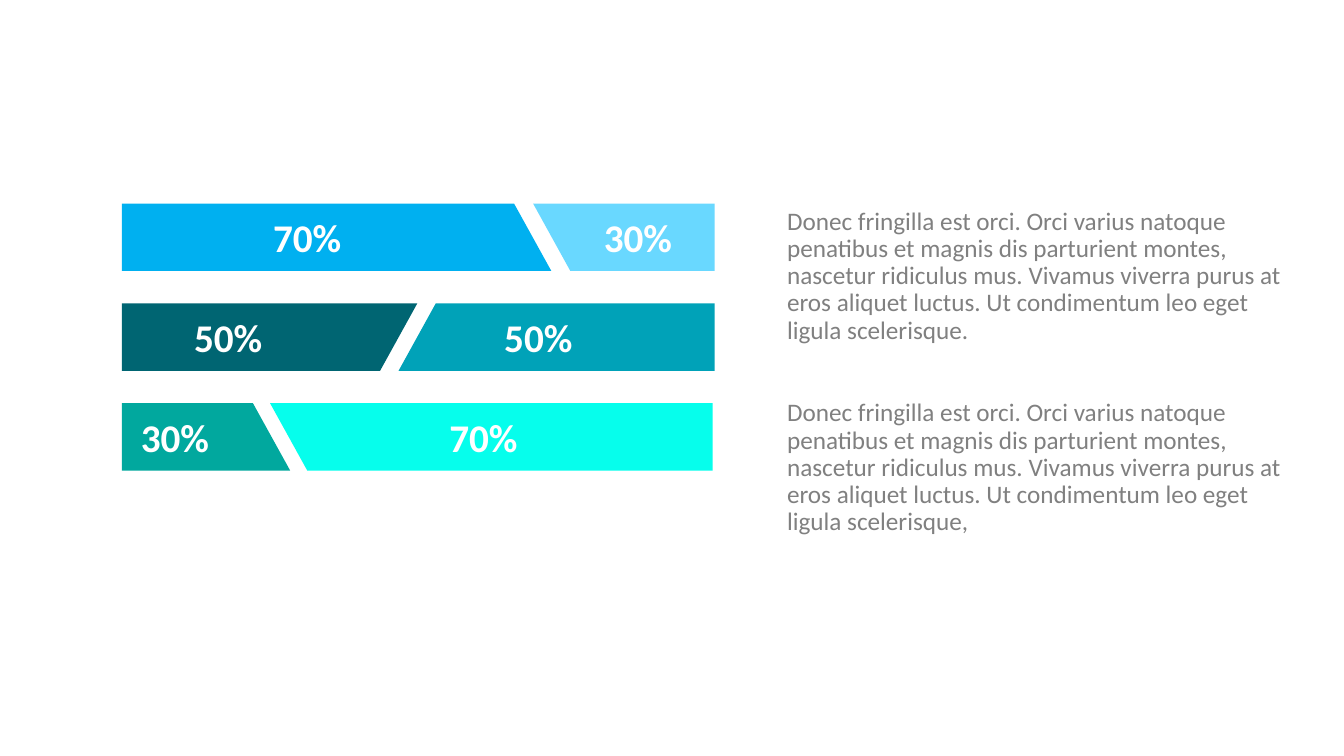
from pptx import Presentation
from pptx.dml.color import RGBColor
from pptx.enum.text import MSO_ANCHOR, PP_ALIGN
from pptx.util import Pt

LEFT, MIDDLE, TOP = PP_ALIGN.LEFT, MSO_ANCHOR.MIDDLE, MSO_ANCHOR.TOP
FONT = "Calibri"
COLORS = {
    "blue": "00B0F0", "sky": "69D8FF",
    "petrol": "006572", "teal": "00A2B8",
    "green": "01A89E", "aqua": "06FEEC",
    "label": "FFFFFF", "body": "808080",
}
BAR_HEIGHT, BAR_PITCH, SLANT = 48.2, 71.3, 26.6

# width, top split, slant, gap, then (share, colour, label indent) for both parts
BARS = [
    (423.4, 280.1, SLANT, 13.6, ("70%", "blue", 108), ("30%", "sky", 50.5)),
    (423.4, 211, -SLANT, 13.2, ("50%", "petrol", 51.5), ("50%", "teal", 75.5)),
    (421.9, 93.6, SLANT, 12.2, ("30%", "green", 13.5), ("70%", "aqua", 128)),
]
BODY = ("Donec fringilla est orci. Orci varius natoque penatibus et magnis dis "
        "parturient montes, nascetur ridiculus mus. Vivamus viverra purus at eros "
        "aliquet luctus. Ut condimentum leo eget ligula scelerisque")
PARAGRAPHS = [(BODY + ".", 10), (BODY + ",", 39.6)]


def color(name):
    return RGBColor.from_string(COLORS[name])


def style(paragraph, size, color_name, bold=False):
    paragraph.alignment = LEFT
    paragraph.font.name = FONT
    paragraph.font.size = Pt(size)
    paragraph.font.bold = bold
    paragraph.font.color.rgb = color(color_name)


def add_segment(slide, corners, share, fill, indent):
    """Draw one part of a bar with its share indented from the left edge."""
    points = [(Pt(x), Pt(y)) for x, y in corners]
    builder = slide.shapes.build_freeform(*points[0])
    builder.add_line_segments(points[1:], close=True)
    segment = builder.convert_to_shape()
    segment.shadow.inherit = False
    segment.fill.solid()
    segment.fill.fore_color.rgb = color(fill)
    segment.line.fill.background()
    frame = segment.text_frame
    frame.vertical_anchor = MIDDLE
    frame.margin_left = Pt(indent)
    frame.margin_right = 0
    frame.text = share
    style(frame.paragraphs[0], 28, "label", bold=True)


def add_split_bar(slide, left, top, bar):
    """Draw a bar cut in two by a slanted gap."""
    width, split, slant, gap, first, second = bar
    right, bottom, cut = left + width, top + BAR_HEIGHT, left + split
    add_segment(slide, [(left, top), (cut, top), (cut + slant, bottom),
                        (left, bottom)], *first)
    cut += gap
    add_segment(slide, [(cut, top), (right, top), (right, bottom),
                        (cut + slant, bottom)], *second)


def add_bars(slide, left, top):
    for row, bar in enumerate(BARS):
        add_split_bar(slide, left, top + row * BAR_PITCH, bar)


def add_body(slide, left, top, width, height):
    box = slide.shapes.add_textbox(Pt(left), Pt(top), Pt(width), Pt(height))
    frame = box.text_frame
    frame.word_wrap = True
    frame.vertical_anchor = TOP
    for index, (text, space_before) in enumerate(PARAGRAPHS):
        paragraph = frame.add_paragraph() if index else frame.paragraphs[0]
        paragraph.text = text
        paragraph.line_spacing = 0.9
        paragraph.space_before = Pt(space_before)
        style(paragraph, 18, "body")


def main():
    prs = Presentation()
    prs.slide_width, prs.slide_height = Pt(960), Pt(540)
    slide = prs.slides.add_slide(prs.slide_layouts[6])
    # Split bars on the left
    add_bars(slide, 87.1, 145.4)
    # Description on the right
    add_body(slide, 555.1, 145.4, 382.3, 219.6)
    prs.save("out.pptx")


if __name__ == "__main__":
    main()
